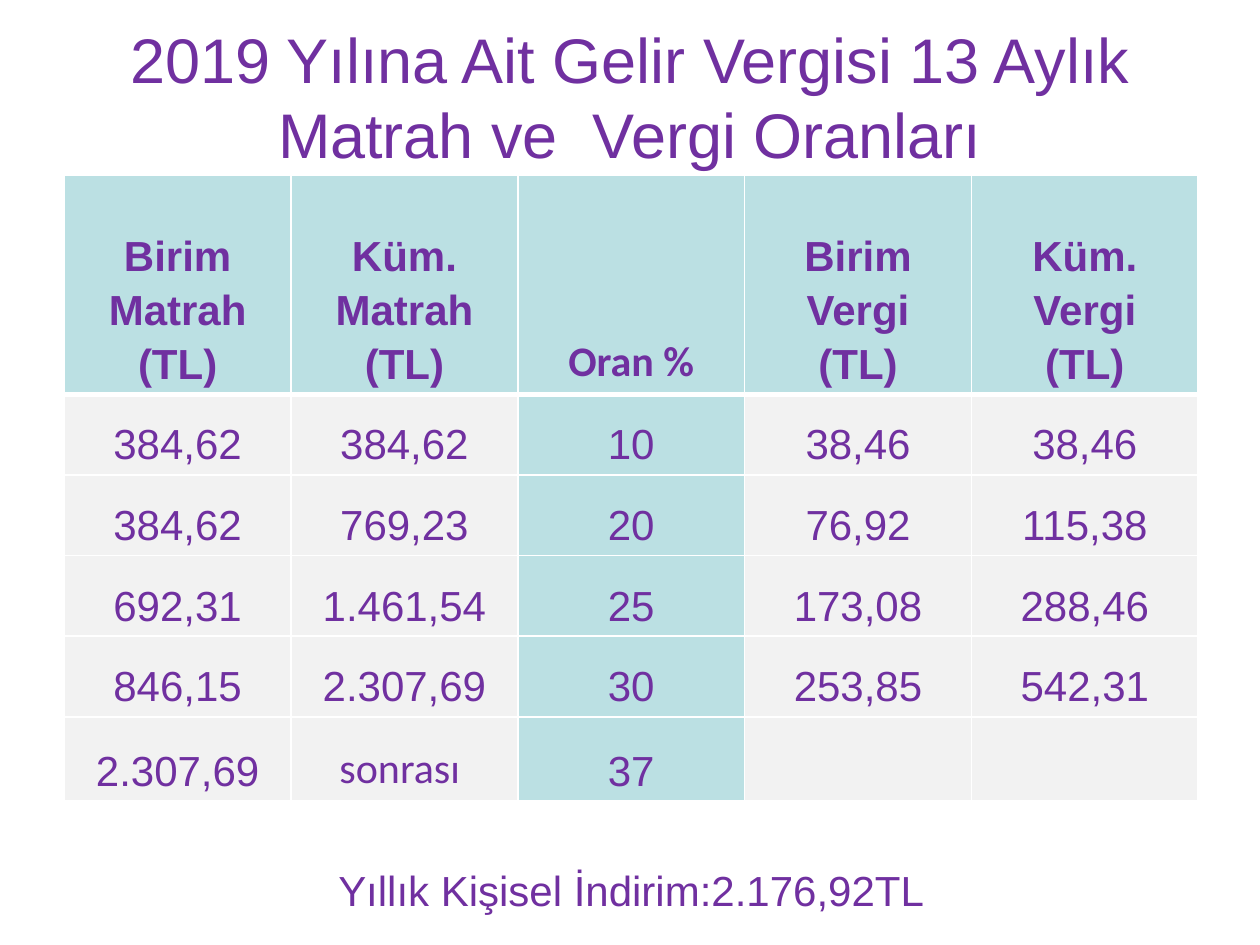
from dataclasses import dataclass

from lxml.etree import SubElement
from pptx import Presentation
from pptx.dml.color import RGBColor
from pptx.enum.text import MSO_ANCHOR, PP_ALIGN
from pptx.oxml.ns import qn
from pptx.util import Inches, Pt


@dataclass(frozen=True)
class Theme:
    text: str = "7030A0"
    accent: str = "BBE0E3"
    body: str = "F2F2F2"
    border: str = "FFFFFF"
    font: str = "Arial"
    alternate_font: str = "Calibri"
    title_size: int = 36
    text_size: int = 24
    thin_line: int = 1
    thick_line: int = 3


RATE_COLUMN = 2
COLUMN_WIDTH = 1.8
ROW_HEIGHTS = [1.74] + [0.64] * 4 + [0.67]
ALTERNATE_FONT_TEXTS = {"Oran %", "sonrası "}
TAX_ROWS = [
    ["Birim Matrah\n(TL)", "Küm. Matrah (TL)", "Oran %", "Birim Vergi (TL)", "Küm.\nVergi (TL)"],
    ["384,62", "384,62", "10", "38,46", "38,46"],
    ["384,62", "769,23", "20", "76,92", "115,38"],
    ["692,31", "1.461,54", "25", "173,08", "288,46"],
    ["846,15", "2.307,69", "30", "253,85", "542,31"],
    ["2.307,69 ", "sonrası ", "37", "", ""],
]


class SlideBuilder:
    def __init__(self, slide, theme):
        self.slide = slide
        self.theme = theme

    def add_run(self, paragraph, text, size, bold=False):
        alternate = text in ALTERNATE_FONT_TEXTS
        paragraph.alignment = PP_ALIGN.CENTER
        run = paragraph.add_run()
        run.text = text
        run.font.name = self.theme.alternate_font if alternate else self.theme.font
        run.font.size = Pt(size)
        run.font.bold = bold
        run.font.color.rgb = RGBColor.from_string(self.theme.text)

    def add_text(self, text, left, top, width, height, size):
        shape = self.slide.shapes.add_textbox(
            Inches(left), Inches(top), Inches(width), Inches(height))
        shape.text_frame.word_wrap = True
        shape.text_frame.vertical_anchor = MSO_ANCHOR.MIDDLE
        self.add_run(shape.text_frame.paragraphs[0], text, size)

    def add_border(self, cell, side, width):
        properties = cell._tc.get_or_add_tcPr()
        line = SubElement(properties, qn(f"a:ln{side}"), w=str(Pt(width)))
        fill = SubElement(line, qn("a:solidFill"))
        SubElement(fill, qn("a:srgbClr"), val=self.theme.border)

    def fill_cell(self, cell, text, row, column):
        theme = self.theme
        header = row == 0
        thick_sides = {0: "B", 1: "T"}
        for side in "LRTB":
            thick = thick_sides.get(row) == side
            self.add_border(cell, side, theme.thick_line if thick else theme.thin_line)
        cell.fill.solid()
        accented = header or column == RATE_COLUMN
        cell.fill.fore_color.rgb = RGBColor.from_string(theme.accent if accented else theme.body)
        cell.vertical_anchor = MSO_ANCHOR.BOTTOM
        cell.margin_left = cell.margin_right = Inches(0.21)
        cell.margin_top = cell.margin_bottom = Inches(0.05)
        if not text:
            return
        frame = cell.text_frame
        for index, line in enumerate(text.split("\n")):
            paragraph = frame.add_paragraph() if index else frame.paragraphs[0]
            paragraph.line_spacing = 1.15
            self.add_run(paragraph, line, theme.text_size, header)

    def add_table(self, rows, left, top, column_width, row_heights):
        column_count = len(rows[0])
        table = self.slide.shapes.add_table(
            len(rows), column_count, Inches(left), Inches(top),
            Inches(column_width * column_count), Inches(sum(row_heights))).table
        for column in table.columns:
            column.width = Inches(column_width)
        for row, height in zip(table.rows, row_heights):
            row.height = Inches(height)
        for row, texts in enumerate(rows):
            for column, text in enumerate(texts):
                self.fill_cell(table.cell(row, column), text, row, column)


def main():
    presentation = Presentation()
    presentation.slide_width = Inches(10)
    presentation.slide_height = Inches(7.5)
    slide = presentation.slides.add_slide(presentation.slide_layouts[6])
    theme = Theme()
    builder = SlideBuilder(slide, theme)
    builder.add_text("2019 Yılına Ait Gelir Vergisi 13 Aylık Matrah ve  Vergi Oranları",
                     0.5, 0.13, 9, 1.26, theme.title_size)
    builder.add_table(TAX_ROWS, 0.51, 1.39, COLUMN_WIDTH, ROW_HEIGHTS)
    builder.add_text("Yıllık Kişisel İndirim:2.176,92TL", 0.51, 6.43, 9, 1.26, theme.text_size)
    presentation.save("out.pptx")


if __name__ == "__main__":
    main()
